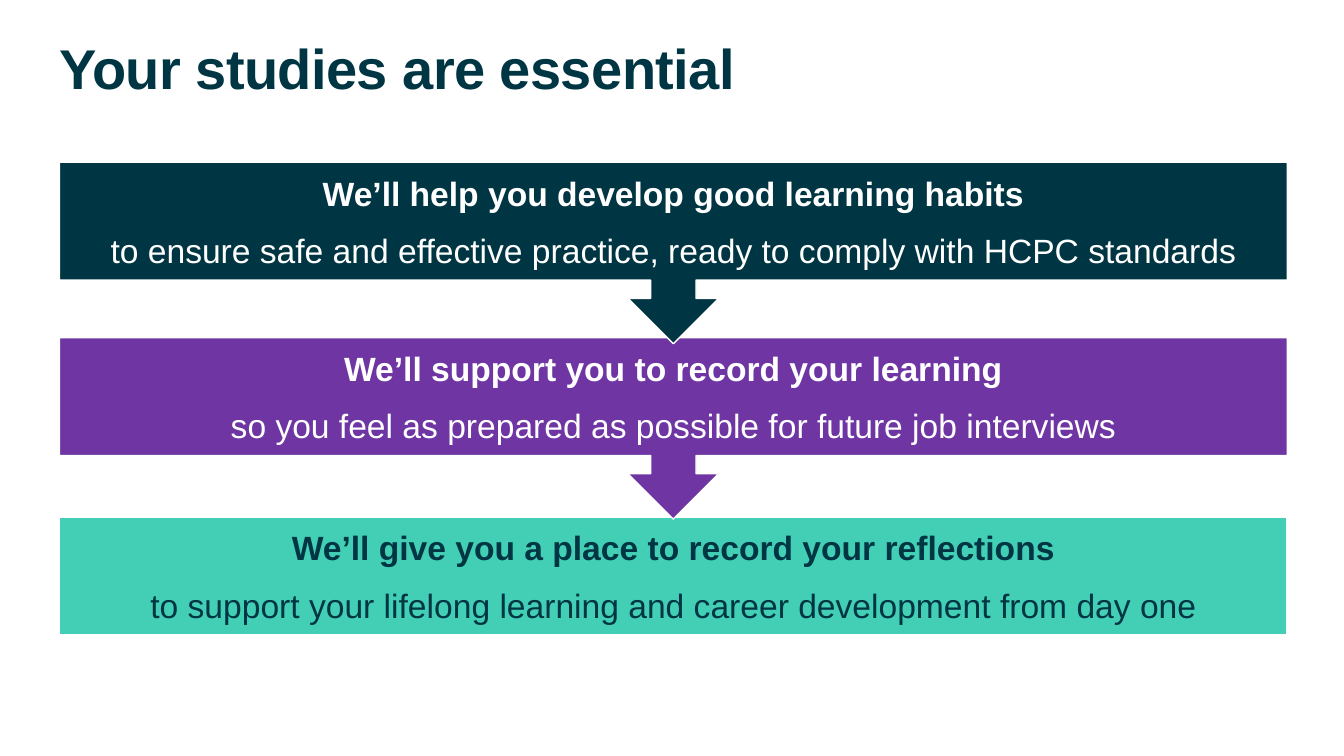
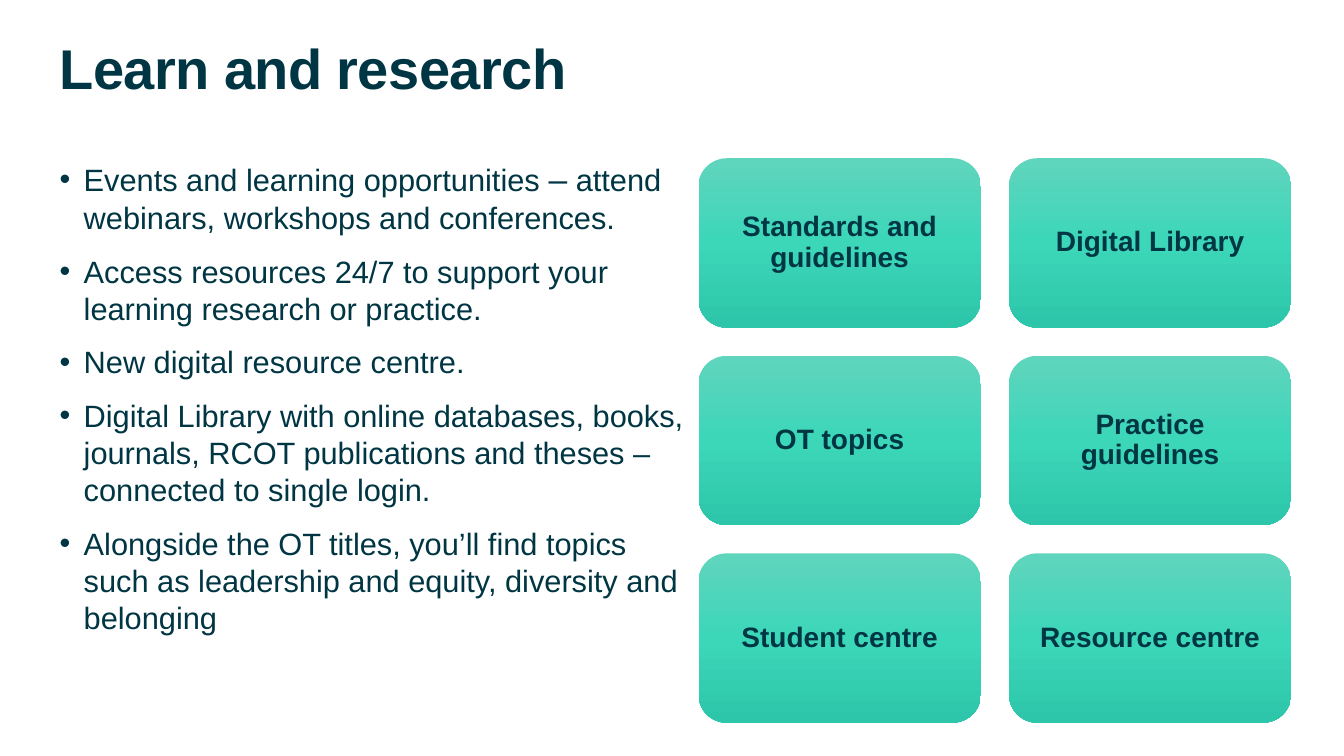
from copy import deepcopy

from lxml.etree import SubElement
from pptx import Presentation
from pptx.dml.color import RGBColor
from pptx.enum.shapes import MSO_SHAPE as SHAPE
from pptx.enum.text import MSO_ANCHOR as ANCHOR, MSO_AUTO_SIZE as AUTO, PP_ALIGN as ALIGN
from pptx.oxml.ns import qn
from pptx.util import Inches, Pt

FONT = "Arial"
INK, PURPLE, TEAL, WHITE = "003643", "6E35A3", "43CFB5", "FFFFFF"
BUTTON_STOPS = [(0, "60D5BD"), (0.5, "3CD6B9"), (1, "2DC6AA")]

# Shares of the slide's size, in percent
LEFT, WIDTH = 4.43, 91.35
TITLE_TOP, TITLE_HEIGHT = 5.47, 10.53
STEP_HEIGHT, CALLOUT_HEIGHT = 15.6, 24
BODY_TOP, BODY_WIDTH, BODY_HEIGHT = 20.93, 47.55, 62.93
BUTTON_LEFT, BUTTON_WIDTH, BUTTON_HEIGHT = 51.98, 21, 22.4
COLUMN_PITCH, ROW_PITCH = 23.1, 26.13

STEPS = [
    (21.47, INK, WHITE, "We’ll help you develop good learning habits",
     "to ensure safe and effective practice, ready to comply with HCPC standards"),
    (44.67, PURPLE, WHITE, "We’ll support you to record your learning",
     "so you feel as prepared as possible for future job interviews"),
    (68.4, TEAL, INK, "We’ll give you a place to record your reflections",
     "to support your lifelong learning and career development from day one"),
]

# Each bullet is a list of (text, size) runs
BULLETS = [
    [("Events and learning opportunities ", 22), ("–", 24),
     (" attend webinars, workshops and conferences.", 22)],
    [("Access resources 24/7 to support your learning research or practice.", 22)],
    [("New digital resource centre.", 22)],
    [("Digital Library with online databases, books, journals, RCOT publications "
      "and theses – connected to single login.", 22)],
    [("Alongside the OT titles, you’ll find topics such as leadership and equity, "
      "diversity and belonging", 22)],
]

BUTTONS = ["Standards and guidelines", "Digital Library", "OT topics",
           "Practice guidelines", "Student centre", "Resource centre"]


def rgb(code):
    return RGBColor.from_string(code)


def add_run(p, text, size, color=INK, bold=False, spacing=None):
    """Add a run; spacing is in hundredths of a point."""
    r = p.add_run()
    r.text = text
    f = r.font
    f.name, f.size, f.bold = FONT, Pt(size), bold
    f.color.rgb = rgb(color)
    if spacing is not None:
        f._element.set("spc", str(spacing))
    return r


def next_paragraph(tf, first, align=ALIGN.LEFT, line=1.0, after=0):
    p = tf.paragraphs[0] if first else tf.add_paragraph()
    p.alignment, p.line_spacing = align, line
    p.space_before, p.space_after = Pt(0), Pt(after)
    return p


def set_frame(tf, anchor, x=0, y=0):
    tf.word_wrap, tf.auto_size, tf.vertical_anchor = True, AUTO.NONE, anchor
    tf.margin_left = tf.margin_right = Inches(x)
    tf.margin_top = tf.margin_bottom = Inches(y)


def add_bullet(p, color=INK, indent=0.24):
    pPr = p._p.get_or_add_pPr()
    pPr.set("marL", str(Inches(indent)))
    pPr.set("indent", str(-Inches(indent)))
    SubElement(SubElement(pPr, qn("a:buClr")), qn("a:srgbClr"), val=color)
    SubElement(pPr, qn("a:buFont"), typeface=FONT)
    SubElement(pPr, qn("a:buChar"), char="•")


class Deck:
    def __init__(self):
        self.prs = Presentation()
        self.prs.slide_width, self.prs.slide_height = Inches(13.333), Inches(7.5)
        self.slide = None

    def box(self, left, top, width, height):
        """Turn percent shares of the slide into lengths."""
        w, h = self.prs.slide_width, self.prs.slide_height
        return [round(share * full / 100) for share, full in
                ((left, w), (top, h), (width, w), (height, h))]

    def place(self, sp, *shares):
        sp.left, sp.top, sp.width, sp.height = self.box(*shares)

    def new_slide(self, title, layout):
        layout = self.prs.slide_layouts.get_by_name(layout)
        self.slide = self.prs.slides.add_slide(layout)
        sp = self.slide.shapes.title
        self.place(sp, LEFT, TITLE_TOP, WIDTH, TITLE_HEIGHT)
        set_frame(sp.text_frame, ANCHOR.TOP)
        p = next_paragraph(sp.text_frame, True, line=0.9)
        add_run(p, title, 40, bold=True, spacing=-40)

    def bullets(self, items):
        sp = self.slide.placeholders[1]
        self.place(sp, LEFT, BODY_TOP, BODY_WIDTH, BODY_HEIGHT)
        set_frame(sp.text_frame, ANCHOR.TOP)
        for i, runs in enumerate(items):
            p = next_paragraph(sp.text_frame, i == 0, after=12)
            add_bullet(p)
            for text, size in runs:
                add_run(p, text, size)

    def shape(self, kind, *shares):
        sp = self.slide.shapes.add_shape(kind, *self.box(*shares))
        sp.shadow.inherit = False
        return sp

    def step(self, top, fill, color, heading, detail, last):
        """Add a band, with an arrow to the next one unless it is the last."""
        kind, height = ((SHAPE.RECTANGLE, STEP_HEIGHT) if last
                        else (SHAPE.DOWN_ARROW_CALLOUT, CALLOUT_HEIGHT))
        sp = self.shape(kind, LEFT, top, WIDTH, height)
        sp.fill.solid()
        sp.fill.fore_color.rgb = rgb(fill)
        sp.line.color.rgb, sp.line.width = rgb(WHITE), Pt(1)
        tf = sp.text_frame
        set_frame(tf, ANCHOR.MIDDLE, x=0.19, y=0.05)
        p = next_paragraph(tf, True, ALIGN.CENTER, after=12)
        add_run(p, heading, 24, color, bold=True)
        p = next_paragraph(tf, False, ALIGN.CENTER)
        add_run(p, detail, 24, color)

    def button(self, text, row, column):
        sp = self.shape(SHAPE.ROUNDED_RECTANGLE,
                        BUTTON_LEFT + column * COLUMN_PITCH,
                        BODY_TOP + row * ROW_PITCH, BUTTON_WIDTH, BUTTON_HEIGHT)
        sp.line.fill.background()
        sp.fill.gradient()
        sp.fill.gradient_angle = 270
        stops = sp._element.spPr.find(qn("a:gradFill")).find(qn("a:gsLst"))
        stops.append(deepcopy(stops[0]))
        for stop, (position, color) in zip(sp.fill.gradient_stops, BUTTON_STOPS):
            stop.position, stop.color.rgb = position, rgb(color)
        set_frame(sp.text_frame, ANCHOR.MIDDLE, x=0.1, y=0.08)
        p = next_paragraph(sp.text_frame, True, ALIGN.CENTER, line=0.9)
        add_run(p, text, 20, bold=True)


def main():
    deck = Deck()

    deck.new_slide("Your studies are essential", "Title Only")
    # Bottom band first, so that each arrow overlaps the band below it
    for step in reversed(STEPS):
        deck.step(*step, last=step is STEPS[-1])

    deck.new_slide("Learn and research", "Title and Content")
    deck.bullets(BULLETS)
    for i, text in enumerate(BUTTONS):
        deck.button(text, *divmod(i, 2))

    deck.prs.save("out.pptx")


if __name__ == "__main__":
    main()
